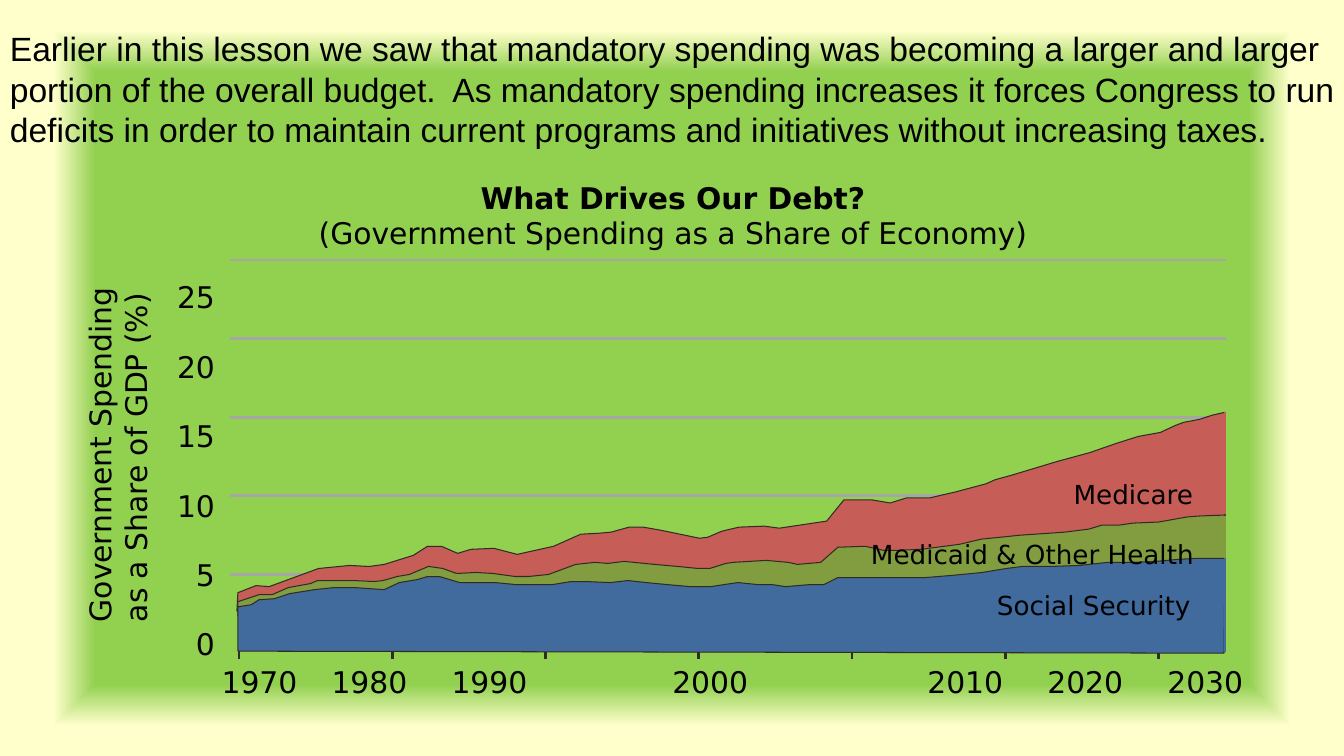
from lxml import etree
from pptx import Presentation
from pptx.dml.color import RGBColor
from pptx.enum.shapes import MSO_CONNECTOR
from pptx.enum.text import MSO_AUTO_SIZE, PP_ALIGN
from pptx.oxml.ns import qn
from pptx.util import Inches, Pt

STRAIGHT = MSO_CONNECTOR.STRAIGHT
GROW = MSO_AUTO_SIZE.SHAPE_TO_FIT_TEXT
LEFT, CENTER, RIGHT = PP_ALIGN.LEFT, PP_ALIGN.CENTER, PP_ALIGN.RIGHT

COLORS = {
    "cream": "FFFFCC", "green": "92D050", "grid": "A6A6A6", "edge": "302C24",
    "text": "000000", "red": "C65D57", "olive": "829D40", "blue": "416A9D",
}

# Outlines of the stacked areas, in inches
MEDICARE = [
    (2.36, 5.88), (2.54, 5.81), (2.67, 5.82), (3.16, 5.64), (3.47, 5.61),
    (3.66, 5.62), (3.81, 5.6), (4.1, 5.51), (4.24, 5.42), (4.38, 5.42),
    (4.54, 5.49), (4.67, 5.45), (4.9, 5.44), (5.13, 5.5), (5.49, 5.42),
    (5.76, 5.3), (5.94, 5.29), (6.06, 5.28), (6.24, 5.23), (6.38, 5.23),
    (6.55, 5.26), (6.94, 5.34), (7.02, 5.33), (7.16, 5.27), (7.33, 5.23),
    (7.58, 5.22), (7.73, 5.24), (8.2, 5.17), (8.37, 4.96), (8.65, 4.96),
    (8.83, 4.99), (8.99, 4.94), (9.22, 4.94), (9.48, 4.88), (9.78, 4.8),
    (9.87, 4.76), (10.05, 4.71), (10.48, 4.58), (10.81, 4.49), (11.07, 4.4),
    (11.29, 4.33), (11.51, 4.29), (11.66, 4.22), (11.74, 4.19), (11.9, 4.16),
    (12.02, 4.12), (12.15, 4.09), (12.15, 6.06), (2.35, 6.06),
]
MEDICAID = [
    (2.36, 5.97), (2.57, 5.9), (2.7, 5.9), (2.86, 5.83), (3.08, 5.79),
    (3.15, 5.76), (3.37, 5.76), (3.51, 5.76), (3.71, 5.77), (3.8, 5.76),
    (3.94, 5.72), (4.06, 5.7), (4.25, 5.62), (4.39, 5.64), (4.53, 5.69),
    (4.72, 5.68), (4.89, 5.69), (5.11, 5.72), (5.24, 5.72), (5.44, 5.7),
    (5.71, 5.6), (5.9, 5.58), (6.03, 5.59), (6.19, 5.57), (6.49, 5.6),
    (6.72, 5.62), (6.92, 5.64), (7.04, 5.64), (7.2, 5.59), (7.27, 5.58),
    (7.6, 5.56), (7.82, 5.58), (7.91, 5.6), (8.14, 5.58), (8.31, 5.43),
    (8.58, 5.42), (8.76, 5.46), (8.91, 5.46), (9.14, 5.45), (9.52, 5.4),
    (9.73, 5.35), (10.12, 5.31), (10.56, 5.28), (10.8, 5.25), (10.93, 5.21),
    (11.1, 5.21), (11.24, 5.19), (11.49, 5.18), (11.77, 5.13), (11.89, 5.12),
    (12.15, 5.11), (12.14, 6.1), (2.36, 6.11),
]
SOCIAL = [
    (2.36, 6.02), (2.49, 6), (2.57, 5.95), (2.72, 5.94), (2.87, 5.89),
    (3.12, 5.85), (3.31, 5.83), (3.52, 5.83), (3.81, 5.85), (3.96, 5.78),
    (4.14, 5.75), (4.24, 5.72), (4.36, 5.72), (4.56, 5.78), (4.76, 5.78),
    (4.91, 5.78), (5.12, 5.8), (5.29, 5.8), (5.48, 5.8), (5.66, 5.77),
    (5.82, 5.77), (6.05, 5.78), (6.23, 5.76), (6.41, 5.78), (6.62, 5.8),
    (6.85, 5.82), (7.05, 5.82), (7.18, 5.8), (7.32, 5.78), (7.52, 5.8),
    (7.66, 5.8), (7.79, 5.82), (8.03, 5.8), (8.17, 5.8), (8.31, 5.73),
    (9.18, 5.73), (9.43, 5.71), (9.74, 5.68), (9.98, 5.64), (10.14, 5.62),
    (10.41, 5.62), (10.71, 5.61), (10.98, 5.58), (11.21, 5.58), (11.46, 5.57),
    (11.68, 5.55), (11.85, 5.54), (12.15, 5.54), (12.14, 6.48), (2.36, 6.46),
]


def rgb(name):
    return RGBColor.from_string(COLORS[name])


class Board:
    """Holds the slide, the group being filled and the text style."""

    def __init__(self, slide):
        self.slide = slide
        self.group = slide.shapes.add_group_shape().shapes
        self.font = {"name": "DejaVu Sans", "size": Pt(21.3), "bold": False}

    def backdrop(self, *stops):
        fill = self.slide.background.fill
        fill.gradient()
        for stop, (place, color) in zip(fill.gradient_stops, stops):
            stop.position = place
            stop.color.rgb = rgb(color)
        grad = self.slide.element.find(".//" + qn("a:gradFill"))
        grad.remove(grad.find(qn("a:lin")))
        shade = etree.SubElement(grad, qn("a:path"), path="shape")
        etree.SubElement(shade, qn("a:fillToRect"), l="50000", t="50000",
                         r="50000", b="50000")

    def line(self, x1, y1, x2, y2, color):
        line = self.group.add_connector(
            STRAIGHT, Inches(x1), Inches(y1), Inches(x2), Inches(y2))
        line.line.color.rgb = rgb(color)
        line.line.width = Pt(2)
        etree.SubElement(line.element.spPr, qn("a:effectLst"))

    def area(self, points, color):
        first, *rest = [(Inches(x), Inches(y)) for x, y in points]
        form = self.group.build_freeform(*first)
        form.add_line_segments(rest, close=True)
        area = form.convert_to_shape()
        area.shadow.inherit = False
        area.fill.solid()
        area.fill.fore_color.rgb = rgb(color)
        area.line.color.rgb = rgb("edge")
        area.line.width = Pt(0.75)

    def text(self, box, lines, align=LEFT, wrap=False, gap=0, turn=0,
             home=None, bold=(), **style):
        shape = (home or self.group).add_textbox(*map(Inches, box))
        shape.rotation = turn
        frame = shape.text_frame
        frame.word_wrap = wrap
        frame.auto_size = GROW
        for i, words in enumerate(lines):
            para = frame.paragraphs[0] if i == 0 else frame.add_paragraph()
            para.alignment = align
            if i:
                para.space_before = Pt(gap)
            run = para.add_run()
            run.text = words
            run.font.color.rgb = rgb("text")
            look = {**self.font, **style, "bold": i in bold}
            for key, value in look.items():
                setattr(run.font, key, value)
        return frame

    def tabs(self, frame, stops):
        props = frame.paragraphs[0]._p.get_or_add_pPr()
        tabs = etree.SubElement(props, qn("a:tabLst"))
        for stop in stops:
            etree.SubElement(tabs, qn("a:tab"), pos=str(Inches(stop)), algn="l")


def main():
    deck = Presentation()
    deck.slide_width, deck.slide_height = Inches(13.33), Inches(7.5)
    slide = deck.slides.add_slide(deck.slide_layouts[6])
    board = Board(slide)
    board.backdrop((0.81, "green"), (0.92, "cream"))

    # Grid lines
    for i in range(5):
        y = 2.58 + 0.78 * i
        board.line(2.28, y, 12.16, y, "grid")

    # Stacked areas, with ticks behind the lowest one
    board.area(MEDICARE, "red")
    board.area(MEDICAID, "olive")
    for i in range(7):
        x = 2.37 + 1.52 * i
        board.line(x, 6.46, x, 6.54, "edge")
    board.area(SOCIAL, "blue")
    for top, base, color in [(4.09, 5.1, "red"), (5.12, 5.54, "olive"),
                             (5.54, 6.47, "blue")]:
        board.line(12.15, top, 12.15, base, color)

    # Title and axis labels
    board.text((2.97, 1.73, 7.41, 0.82),
               ["What Drives Our Debt?",
                "(Government Spending as a Share of Economy)"],
               align=CENTER, bold=(0,))
    years = board.text((2.1, 6.54, 10.38, 0.46),
                       ["1970\t1980\t1990\t2000\t2010\t2020\t2030"], wrap=True)
    board.tabs(years, [1.09, 2.28, 4.47, 7, 8.19, 9.38])
    board.text((1.65, 2.72, 0.58, 3.94), [str(n) for n in range(25, -1, -5)],
               align=RIGHT, gap=24)
    board.text((-0.65, 4.04, 3.64, 0.82),
               ["Government Spending", "as a Share of GDP (%)"], turn=270)

    # Area names
    for x, y, width, name in [(10.55, 4.7, 1.5, "Medicare"),
                              (8.54, 5.29, 3.45, "Medicaid & Other Health"),
                              (9.79, 5.8, 2.2, "Social Security")]:
        board.text((x, y, width, 0.42), [name], size=Pt(18.7))

    # Opening text
    board.text((0, 0.23, 13.57, 1.31), [
        "Earlier in this lesson we saw that mandatory spending was becoming a larger and larger",
        "portion of the overall budget.  As mandatory spending increases it forces Congress to run",
        "deficits in order to maintain current programs and initiatives without increasing taxes.",
    ], home=slide.shapes, name="Arial", size=Pt(24))

    deck.save("out.pptx")


if __name__ == "__main__":
    main()
